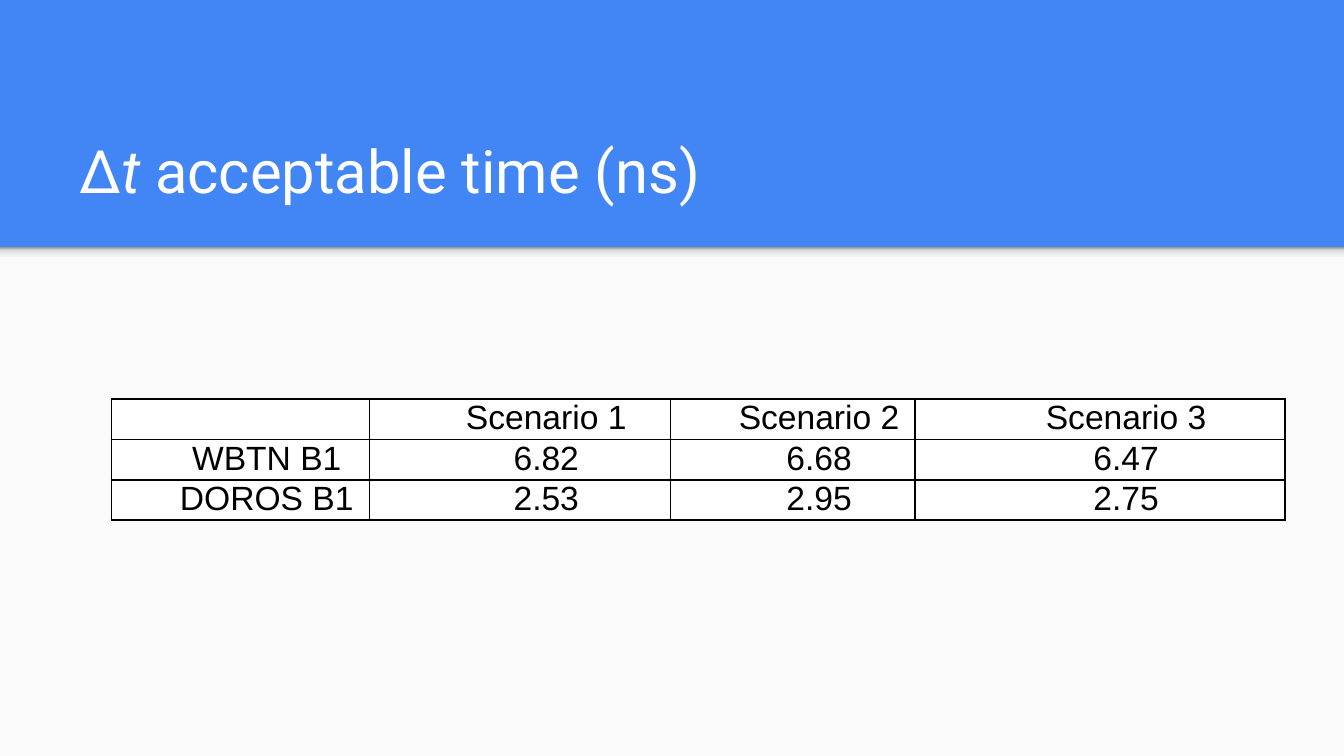
from lxml import etree
from pptx import Presentation
from pptx.dml.color import RGBColor
from pptx.enum import shapes, text
from pptx.oxml.ns import qn
from pptx.util import Inches, Pt

COLORS = {"banner": "4285F4", "body": "FAFAFA", "white": "FFFFFF", "black": "000000"}
SHADOW_STOPS = [(0, "F9F9F9"), (36, "F9F9F9"), (80, "DEDEDE"), (100, "999999")]
COLUMN_WIDTHS = [1.92, 2.24, 1.82, 2.75]
ROW_HEIGHT = 0.3
ROWS = [
    ["", "Scenario 1", "Scenario 2", "Scenario 3"],
    ["WBTN B1", "6.82", "6.68", "6.47"],
    ["DOROS B1", "2.53", "2.95", "2.75"],
]


def add_run(paragraph, words, size, font, color, italic=False):
    run = paragraph.add_run()
    run.text = words
    run.font.size = Pt(size)
    run.font.name = font
    run.font.italic = italic
    run.font.color.rgb = RGBColor.from_string(COLORS[color])


def add_band(top, height):
    band = slide.shapes.add_shape(
        shapes.MSO_SHAPE.RECTANGLE, 0, top, prs.slide_width, height)
    band.shadow.inherit = False
    band.line.fill.background()
    return band


prs = Presentation()
prs.slide_width, prs.slide_height = Inches(10), Inches(10 * 9 / 16)
slide = prs.slides.add_slide(prs.slide_layouts[6])
slide.background.fill.solid()
slide.background.fill.fore_color.rgb = RGBColor.from_string(COLORS["banner"])

banner_bottom = Inches(1.84)
body = add_band(banner_bottom, prs.slide_height - banner_bottom)
body.fill.solid()
body.fill.fore_color.rgb = RGBColor.from_string(COLORS["body"])

banner_shadow = add_band(banner_bottom, Inches(0.12))
banner_shadow.fill.gradient()
banner_shadow.fill.gradient_angle = 90
stops = next(banner_shadow._element.iter(qn("a:gsLst")))
for stop in list(stops):
    stops.remove(stop)
for position, color in SHADOW_STOPS:
    stop = etree.SubElement(stops, qn("a:gs"), pos=str(position * 1000))
    etree.SubElement(stop, qn("a:srgbClr"), val=color)

title = slide.shapes.add_textbox(Inches(0.49), Inches(0.79), Inches(8.99), Inches(0.84))
frame = title.text_frame
frame.word_wrap = True
frame.vertical_anchor = text.MSO_ANCHOR.BOTTOM
frame.margin_left = frame.margin_right = Inches(0.1)
frame.margin_top = frame.margin_bottom = Inches(0.1)
for words, italic in [("Δ", False), ("t", True), (" acceptable time (ns)", False)]:
    add_run(frame.paragraphs[0], words, 32, "Roboto", "white", italic)

times = slide.shapes.add_table(
    len(ROWS), len(COLUMN_WIDTHS), Inches(0.83), Inches(2.97),
    Inches(sum(COLUMN_WIDTHS)), Inches(ROW_HEIGHT * len(ROWS))).table
for column, width in zip(times.columns, COLUMN_WIDTHS):
    column.width = Inches(width)
for r, row in enumerate(ROWS):
    times.rows[r].height = Inches(ROW_HEIGHT)
    for c, words in enumerate(row):
        cell = times.cell(r, c)
        cell.margin_left = cell.margin_right = Inches(0.07)
        cell.margin_top = cell.margin_bottom = 0
        properties = cell._tc.get_or_add_tcPr()
        for side in ["a:lnL", "a:lnR", "a:lnT", "a:lnB"]:
            border = etree.SubElement(properties, qn(side), w=str(Pt(1)))
            border_fill = etree.SubElement(border, qn("a:solidFill"))
            etree.SubElement(border_fill, qn("a:srgbClr"), val=COLORS["black"])
        cell.fill.solid()
        cell.fill.fore_color.rgb = RGBColor.from_string(COLORS["white"])
        if words:
            paragraph = cell.text_frame.paragraphs[0]
            paragraph.alignment = text.PP_ALIGN.CENTER
            paragraph.line_spacing = 1.0
            indents = paragraph._p.get_or_add_pPr()
            indents.set("marL", "0")
            indents.set("indent", str(Inches(0.39)))
            add_run(paragraph, words, 18, "Arial", "black")

prs.save("out.pptx")
